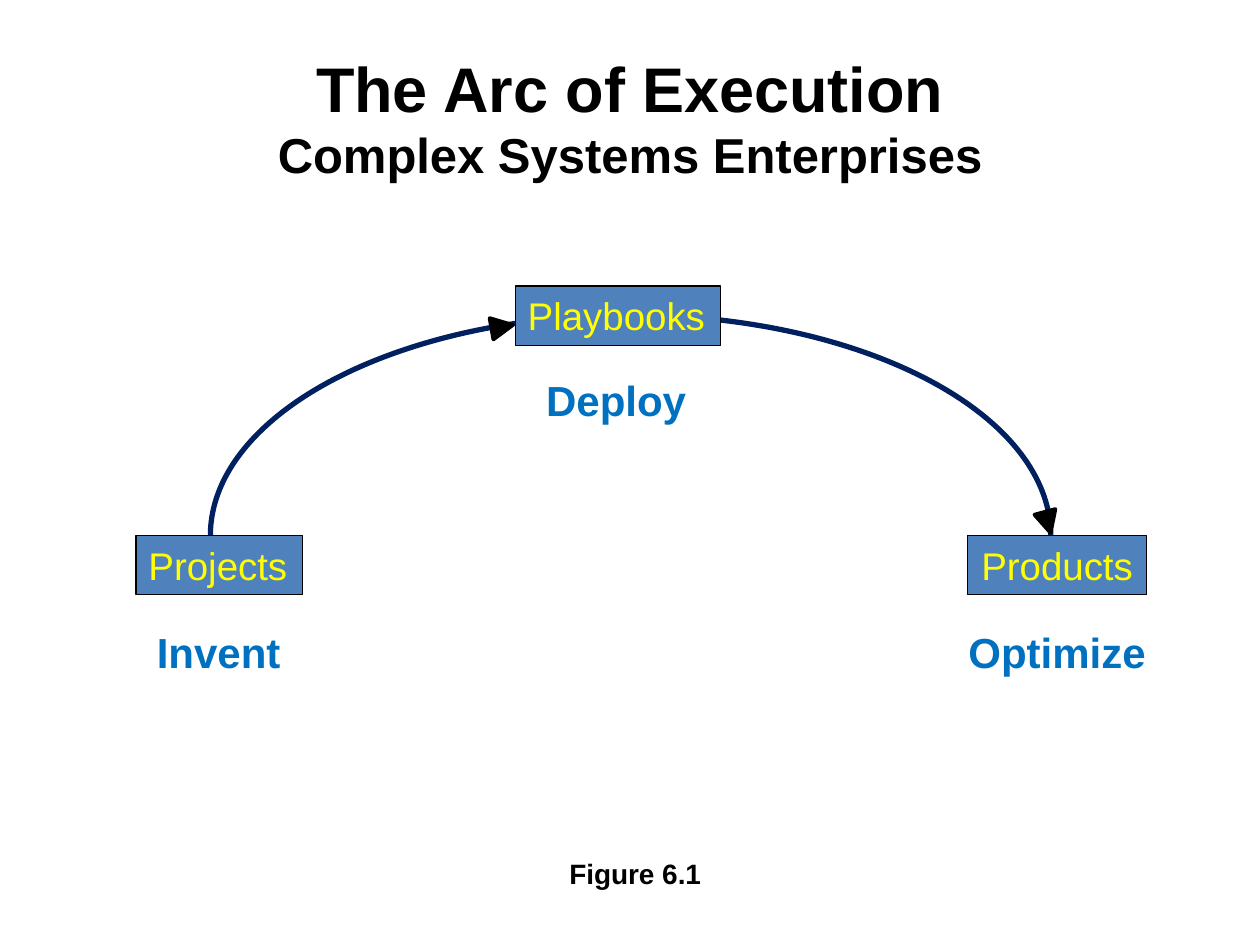
from pptx import Presentation
from pptx.dml.color import RGBColor
from pptx.enum.shapes import MSO_SHAPE as SHAPE
from pptx.enum.text import MSO_ANCHOR as ANCHOR, MSO_AUTO_SIZE as AUTO, PP_ALIGN as ALIGN
from pptx.util import Inches, Pt

COLORS = {"black": "000000", "navy": "002060", "box": "4F81BD", "yellow": "FFFF00", "blue": "0070C0"}
TITLE = [("The Arc of Execution", 36), ("Complex Systems Enterprises", 28)]
STAGES = [
    ("Playbooks", (4.09, 2.27, 1.63, 0.47), ALIGN.LEFT),
    ("Projects", (1.08, 4.25, 1.32, 0.47), ALIGN.LEFT),
    ("Products", (7.68, 4.25, 1.42, 0.47), ALIGN.CENTER),
]
LABELS = [
    ("Figure 6.1", (4.42, 6.75, 1.26, 0.37), ALIGN.LEFT, 16, "black"),
    ("Invent", (1.14, 4.92, 1.19, 0.5), ALIGN.CENTER, 24, "blue"),
    ("Deploy", (4.23, 2.92, 1.32, 0.5), ALIGN.CENTER, 24, "blue"),
    ("Optimize", (7.58, 4.92, 1.62, 0.5), ALIGN.CENTER, 24, "blue"),
]
ARC_BOX = (1.67, 2.5, 6.67, 3.5)
ARC_ANGLES = [(270, 0), (180, 270)]
ARROWHEADS = [((3.9, 2.51, 0.17, 0.17), 80), ((8.23, 4.06, 0.17, 0.17), 165)]


def rgb(name):
    return RGBColor.from_string(COLORS[name])


def inches(box):
    return [Inches(v) for v in box]


def add_run(p, text, size, color, bold):
    r = p.add_run()
    r.text = text
    for key, value in {"name": "Arial", "size": Pt(size), "bold": bold}.items():
        setattr(r.font, key, value)
    r.font.color.rgb = rgb(color)


def write(s, text, align, size, color, bold):
    tf = s.text_frame
    fmt = {"word_wrap": False, "auto_size": AUTO.SHAPE_TO_FIT_TEXT, "vertical_anchor": ANCHOR.TOP}
    for key, value in fmt.items():
        setattr(tf, key, value)
    p = tf.paragraphs[0]
    p.alignment = align
    add_run(p, text, size, color, bold)


def add_shape(kind, box, line, width, fill=None):
    s = slide.shapes.add_shape(kind, *inches(box))
    s.shadow.inherit = False
    s.line.color.rgb = rgb(line)
    s.line.width = Pt(width)
    if fill:
        s.fill.solid()
        s.fill.fore_color.rgb = rgb(fill)
    else:
        s.fill.background()
    return s


prs = Presentation()
prs.slide_width, prs.slide_height = Inches(10), Inches(7.5)
slide = prs.slides.add_slide(prs.slide_layouts[5])

title = slide.shapes.title
title.left, title.top, title.width, title.height = inches((0.5, 0.3, 9, 1.25))
title.text_frame.vertical_anchor = ANCHOR.MIDDLE
p = title.text_frame.paragraphs[0]
p.alignment = ALIGN.CENTER
for i, (text, size) in enumerate(TITLE):
    if i:
        p.add_line_break()
    add_run(p, text, size, "black", True)

for angles in ARC_ANGLES:
    arc = add_shape(SHAPE.ARC, ARC_BOX, "navy", 3)
    for i, degrees in enumerate(angles):
        arc.adjustments[i] = degrees * 0.6

for text, box, align in STAGES:
    s = add_shape(SHAPE.RECTANGLE, box, "black", 0.75, "box")
    write(s, text, align, 22, "yellow", False)

for box, rotation in ARROWHEADS:
    s = add_shape(SHAPE.ISOSCELES_TRIANGLE, box, "black", 2.25, "black")
    s.rotation = rotation

for text, box, align, size, color in LABELS:
    write(slide.shapes.add_textbox(*inches(box)), text, align, size, color, True)

prs.save("out.pptx")
